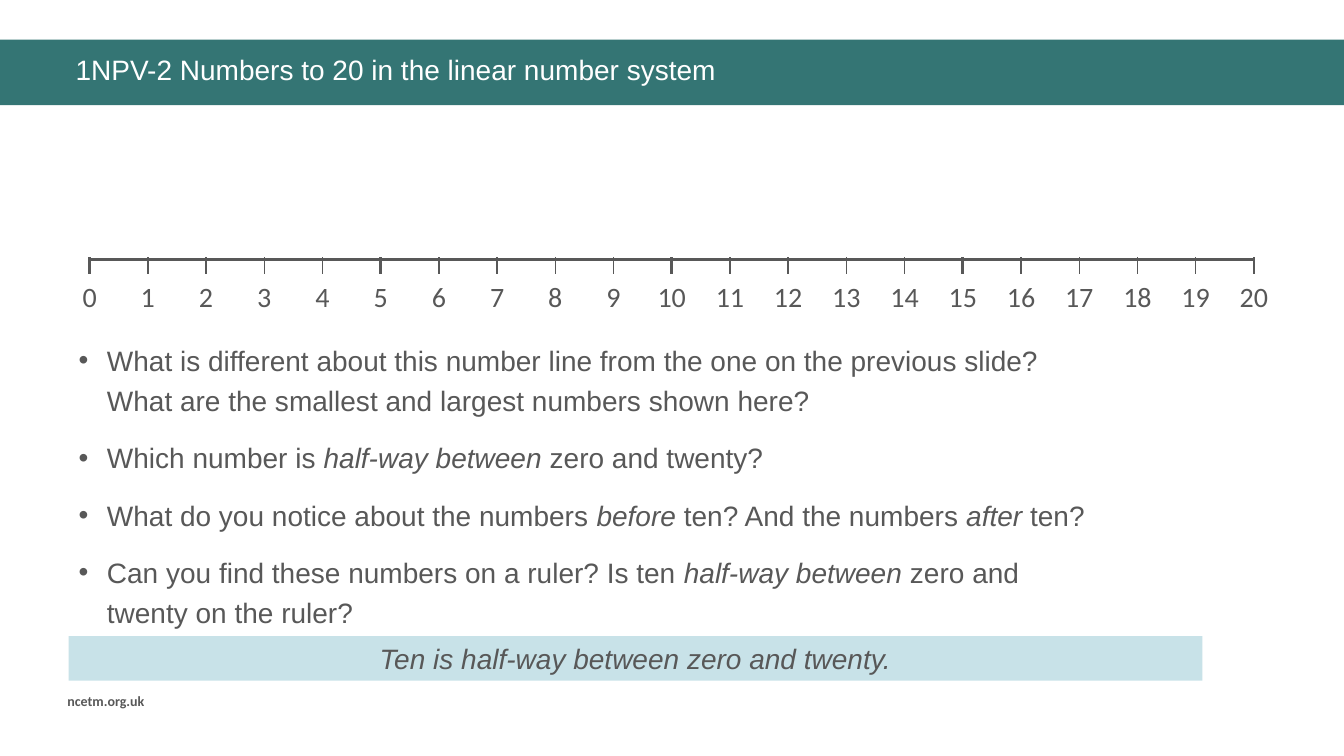
from lxml import etree
from pptx import Presentation
from pptx.dml.color import RGBColor
from pptx.enum.shapes import MSO_CONNECTOR, MSO_SHAPE
from pptx.enum.text import MSO_ANCHOR, MSO_AUTO_SIZE, PP_ALIGN
from pptx.oxml.ns import qn
from pptx.util import Cm, Pt

STRAIGHT = MSO_CONNECTOR.STRAIGHT
RECTANGLE = MSO_SHAPE.RECTANGLE
TOP, MIDDLE = MSO_ANCHOR.TOP, MSO_ANCHOR.MIDDLE
LEFT, CENTER = PP_ALIGN.LEFT, PP_ALIGN.CENTER
FIXED = MSO_AUTO_SIZE.NONE

COLOURS = {"banner": "347574", "ink": "585858", "answer": "C8E2E8", "title": "FFFFFF"}

LINE_START, LINE_END, LAST_NUMBER = 2.26, 31.6, 20
STEP = (LINE_END - LINE_START) / LAST_NUMBER
LABEL_WIDTH = 1.4

QUESTIONS = [
    [("What is different about this number line from the one on the previous slide? "
      "What are the smallest and largest numbers shown here?", False)],
    [("Which number is ", False), ("half-way between ", True), ("zero and twenty?", False)],
    [("What do you notice about the numbers ", False), ("before ", True),
     ("ten? And the numbers ", False), ("after ", True), ("ten?", False)],
    [("Can you find these numbers on a ruler? Is ten ", False), ("half-way between", True),
     (" zero and twenty on the ruler?", False)],
]


def write(para, text, size=20, font="Arial", colour="ink", bold=False, italic=False, align=LEFT):
    para.alignment = align
    span = para.add_run()
    span.text = text
    span.font.size = Pt(size)
    span.font.name = font
    span.font.bold = bold
    span.font.italic = italic
    span.font.color.rgb = RGBColor.from_string(COLOURS[colour])


def draw_line(page, x1, y1, x2, y2, weight):
    line = page.shapes.add_connector(STRAIGHT, Cm(x1), Cm(y1), Cm(x2), Cm(y2))
    line.line.color.rgb = RGBColor.from_string(COLOURS["ink"])
    line.line.width = Pt(weight)
    etree.SubElement(line._element.spPr, qn("a:effectLst"))


deck = Presentation()
deck.slide_width, deck.slide_height = Cm(33.87), Cm(19.05)
page = deck.slides.add_slide(deck.slide_layouts[1])
title, body = page.placeholders

bands = {}
for name, left, top, width, height in [
    ("banner", 0, 1, 33.87, 1.65),
    ("answer", 1.73, 16.03, 28.57, 1.12),
]:
    band = page.shapes.add_shape(RECTANGLE, Cm(left), Cm(top), Cm(width), Cm(height))
    band.shadow.inherit = False
    band.fill.solid()
    band.fill.fore_color.rgb = RGBColor.from_string(COLOURS[name])
    band.line.fill.background()
    bands[name] = band
page.shapes._spTree.insert(2, bands["banner"]._element)

title.left, title.top, title.width, title.height = Cm(1.65), Cm(1.3), Cm(31.29), Cm(1.19)
title.text_frame.vertical_anchor = TOP
title.text_frame.auto_size = FIXED
heading = title.text_frame.paragraphs[0]
heading.line_spacing = 0.9
write(heading, "1NPV-2 Numbers to 20 in the linear number system", colour="title")

draw_line(page, LINE_START - 0.02, 6.53, LINE_END + 0.02, 6.53, 2.25)
for number in range(LAST_NUMBER + 1):
    x = LINE_START + number * STEP
    draw_line(page, x, 6.48, x, 6.9, 2 if number % 5 == 0 else 1)
    label = page.shapes.add_textbox(Cm(x - LABEL_WIDTH / 2), Cm(6.93), Cm(LABEL_WIDTH), Cm(1.12))
    label.text_frame.word_wrap = True
    write(label.text_frame.paragraphs[0], str(number), font="Calibri", align=CENTER)

body.left, body.top, body.width, body.height = Cm(1.73), Cm(8.36), Cm(26.14), Cm(7.62)
frame = body.text_frame
frame.vertical_anchor = TOP
frame.auto_size = FIXED
for index, question in enumerate(QUESTIONS):
    para = frame.add_paragraph() if index else frame.paragraphs[0]
    properties = para._p.get_or_add_pPr()
    properties.set("marL", str(Cm(0.71)))
    properties.set("indent", str(-Cm(0.71)))
    bullet_colour = etree.SubElement(properties, qn("a:buClr"))
    etree.SubElement(bullet_colour, qn("a:srgbClr"), val=COLOURS["ink"])
    etree.SubElement(properties, qn("a:buFont"), typeface="Arial")
    etree.SubElement(properties, qn("a:buChar"), char="•")
    para.line_spacing = 1.2
    para.space_before = Pt(6 if index else 0)
    para.space_after = Pt(6)
    for text, italic in question:
        write(para, text, italic=italic)

answer = bands["answer"].text_frame
answer.vertical_anchor = MIDDLE
answer.word_wrap = True
write(answer.paragraphs[0], "Ten is half-way between zero and twenty.", italic=True, align=CENTER)

site = page.shapes.add_textbox(Cm(1.45), Cm(17.32), Cm(3.07), Cm(0.69))
site.text_frame.word_wrap = True
write(site.text_frame.paragraphs[0], "ncetm.org.uk", size=10, font="Calibri", bold=True)

deck.save("out.pptx")
